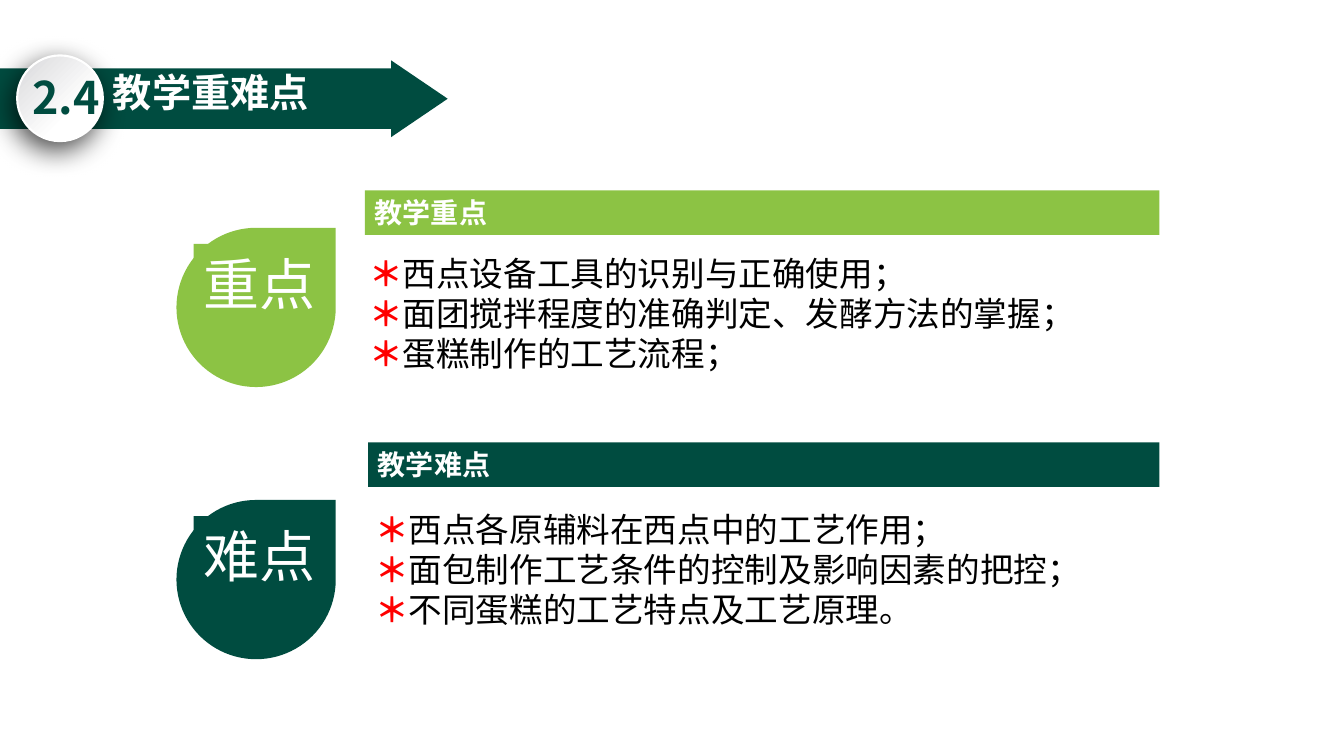
from dataclasses import dataclass

from lxml import etree
from pptx import Presentation
from pptx.dml.color import RGBColor
from pptx.enum.shapes import MSO_SHAPE as Shape
from pptx.enum.text import MSO_ANCHOR as Anchor, MSO_AUTO_SIZE as AutoSize, PP_ALIGN as Align
from pptx.oxml import parse_xml
from pptx.oxml.ns import nsdecls, qn
from pptx.util import Inches, Pt


@dataclass(frozen=True)
class Theme:
    green: str = "004C40"
    lime: str = "8CC344"
    white: str = "FFFFFF"
    silver: str = "DBDBDD"
    black: str = "000000"
    red: str = "FF0000"
    font: str = "Noto Sans CJK SC"
    latin_font: str = "Calibri"
    label_size: int = 40
    number_size: int = 32
    title_size: int = 28
    list_size: int = 24
    heading_size: int = 20
    list_spacing: float = 28.6


THEME = Theme()

SECTIONS = [
    {
        "label": "重点", "heading": "教学重点", "color": THEME.lime, "font": THEME.font,
        "drop_top": 2.26, "bar": (3.62, 1.89, 7.88, 0.44), "list": (3.56, 2.42, 7.93, 1.31),
        "items": ["西点设备工具的识别与正确使用；",
                  "面团搅拌程度的准确判定、发酵方法的掌握；",
                  "蛋糕制作的工艺流程；"],
    },
    {
        "label": "难点", "heading": "教学难点", "color": THEME.green, "font": THEME.latin_font,
        "drop_top": 4.96, "bar": (3.65, 4.39, 7.85, 0.44), "list": (3.62, 4.96, 7.93, 1.31),
        "items": ["西点各原辅料在西点中的工艺作用；",
                  "面包制作工艺条件的控制及影响因素的把控；",
                  "不同蛋糕的工艺特点及工艺原理。"],
    },
]


def set_format(target, values):
    for name, value in values.items():
        setattr(target, name, value)


def place(shape, box):
    names = ("left", "top", "width", "height")
    set_format(shape, dict(zip(names, map(Inches, box))))


def format_frame(shape, anchor=Anchor.MIDDLE, wrap=True, margin_top=0):
    set_format(shape.text_frame, {
        "auto_size": AutoSize.NONE, "word_wrap": wrap, "vertical_anchor": anchor,
        "margin_left": Inches(0.1), "margin_right": Inches(0.1),
        "margin_top": Inches(margin_top), "margin_bottom": 0,
    })


def add_run(paragraph, text, size, color, bold=False, font=THEME.font):
    run = paragraph.add_run()
    run.text = text
    set_format(run.font, {"size": Pt(size), "bold": bold, "name": font})
    run.font.color.rgb = RGBColor.from_string(color)
    east_asian = etree.SubElement(run.font._element, qn("a:ea"))
    east_asian.set("typeface", THEME.font)


def write_line(shape, text, size, color, bold=False):
    paragraph = shape.text_frame.paragraphs[0]
    paragraph.alignment = Align.LEFT
    add_run(paragraph, text, size, color, bold)


def add_solid(slide, kind, box, color):
    shape = slide.shapes.add_shape(kind, *map(Inches, box))
    shape.shadow.inherit = False
    shape.fill.solid()
    shape.fill.fore_color.rgb = RGBColor.from_string(color)
    shape.line.fill.background()
    return shape


def add_badge(slide, box):
    badge = add_solid(slide, Shape.OVAL, box, THEME.white)
    badge.fill.gradient()
    stops = zip(badge.fill.gradient_stops, ((0.34, THEME.white), (0.96, THEME.silver)))
    for stop, (position, color) in stops:
        stop.position = position
        stop.color.rgb = RGBColor.from_string(color)
    properties = badge._element.spPr
    gradient = properties.find(qn("a:gradFill"))
    gradient.replace(gradient.find(qn("a:lin")), parse_xml(
        f'<a:path {nsdecls("a")} path="circle"><a:fillToRect l="100000" t="100000"/></a:path>'))
    badge.line.color.rgb = RGBColor.from_string(THEME.white)
    badge.line.width = Pt(1.5)
    properties.find(qn("a:effectLst")).append(parse_xml(
        f'<a:outerShdw {nsdecls("a")} blurRad="{Pt(20)}" dist="{Pt(7)}" dir="{120 * 60000}" '
        'algn="ctr" rotWithShape="0"><a:srgbClr val="000000"><a:alpha val="70000"/>'
        '</a:srgbClr></a:outerShdw>'))


def add_title_banner(slide, number, text):
    add_solid(slide, Shape.RECTANGLE, (0, 0.68, 3.89, 0.6), THEME.green)
    arrow = add_solid(slide, Shape.ISOSCELES_TRIANGLE, (3.78, 0.7, 0.76, 0.56), THEME.green)
    arrow.rotation = 90
    title = slide.shapes.title
    slide.shapes._spTree.append(title._element)
    place(title, (1.02, 0.68, 7.76, 0.87))
    format_frame(title, Anchor.TOP)
    write_line(title, text, THEME.title_size, THEME.white, True)
    add_badge(slide, (0.17, 0.55, 0.85, 0.85))
    number_box = slide.shapes.add_textbox(*map(Inches, (0.22, 0.64, 0.88, 0.64)))
    format_frame(number_box, wrap=False)
    write_line(number_box, number, THEME.number_size, THEME.green, True)


def add_drop(slide, top, text, color):
    add_solid(slide, Shape.TEAR, (1.75, top, 1.58, 1.58), color)
    label = add_solid(slide, Shape.RECTANGLE, (1.92, top + 0.16, 1.32, 0.77), color)
    format_frame(label, wrap=False)
    write_line(label, text, THEME.label_size, THEME.white)


def add_heading(slide, box, text, color):
    bar = add_solid(slide, Shape.RECTANGLE, box, color)
    format_frame(bar)
    write_line(bar, text, THEME.heading_size, THEME.white, True)


def fill_list(placeholder, box, items, font):
    place(placeholder, box)
    format_frame(placeholder, Anchor.TOP, margin_top=0.09)
    frame = placeholder.text_frame
    for index, item in enumerate(items):
        paragraph = frame.add_paragraph() if index else frame.paragraphs[0]
        properties = paragraph._p.get_or_add_pPr()
        properties.set("marL", "0")
        properties.set("indent", "0")
        etree.SubElement(properties, qn("a:buNone"))
        set_format(paragraph, {
            "alignment": Align.LEFT, "space_before": Pt(0), "space_after": Pt(0),
            "line_spacing": Pt(THEME.list_spacing),
        })
        add_run(paragraph, "＊", THEME.list_size, THEME.red, True)
        add_run(paragraph, item, THEME.list_size, THEME.black, font=font)


def main():
    presentation = Presentation()
    set_format(presentation, {"slide_width": Inches(13.33), "slide_height": Inches(7.5)})
    slide = presentation.slides.add_slide(presentation.slide_layouts.get_by_name("Two Content"))
    add_title_banner(slide, "2.4", "教学重难点")
    for index, section in enumerate(SECTIONS, start=1):
        add_drop(slide, section["drop_top"], section["label"], section["color"])
        add_heading(slide, section["bar"], section["heading"], section["color"])
        placeholder = next(shape for shape in slide.placeholders
                           if shape.placeholder_format.idx == index)
        fill_list(placeholder, section["list"], section["items"], section["font"])
    presentation.save("out.pptx")


if __name__ == "__main__":
    main()
